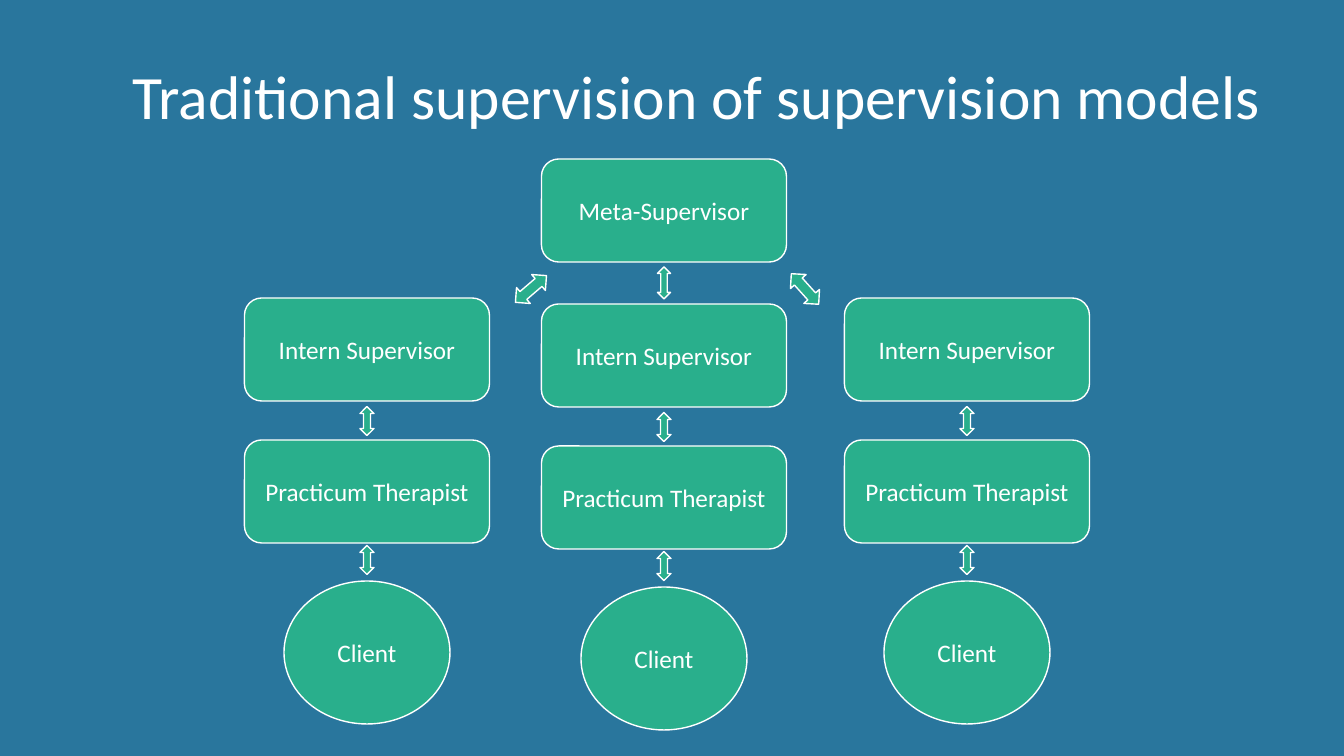
"""Build the slide on traditional supervision of supervision models."""
import pptx
import pptx.util
import pptx.dml.color
import pptx.enum.shapes
import pptx.enum.text

BLUE = pptx.dml.color.RGBColor(0x29, 0x76, 0x9D)
GREEN = pptx.dml.color.RGBColor(0x29, 0xAF, 0x8C)
WHITE = pptx.dml.color.RGBColor(0xFF, 0xFF, 0xFF)
KIND = pptx.enum.shapes.MSO_SHAPE
SCALE = 914400 / 100.8
BOX = (245, 103)
ROUND = (166, 143)
LINK = (29, 14)
FRAME = {"word_wrap": True, "vertical_anchor": pptx.enum.text.MSO_ANCHOR.MIDDLE}
FONT = {"name": "Calibri"}


def px(count):
    return pptx.util.Emu(round(count * SCALE))


def apply(target, values):
    for name, value in values.items():
        setattr(target, name, value)


def write(shape, text, size):
    frame = shape.text_frame
    frame.text = text
    apply(frame, FRAME)
    line = frame.paragraphs[0]
    line.alignment = pptx.enum.text.PP_ALIGN.CENTER
    font = line.runs[0].font
    apply(font, FONT | {"size": pptx.util.Pt(size)})
    font.color.rgb = WHITE
    return frame


def add_form(shapes, kind, mid, top, size):
    wide, high = size
    form = shapes.add_shape(kind, px(mid - wide / 2), px(top), px(wide), px(high))
    form.shadow.inherit = False
    form.fill.solid()
    form.fill.fore_color.rgb = GREEN
    form.line.color.rgb = WHITE
    form.line.width = pptx.util.Pt(1)
    return form


def add_node(shapes, kind, mid, top, size, text):
    write(add_form(shapes, kind, mid, top, size), text, 18)


def add_arrow(shapes, mid, level, size, angle):
    top = level - size[1] / 2
    add_form(shapes, KIND.LEFT_RIGHT_ARROW, mid, top, size).rotation = angle


def add_column(slide, mid, top):
    shapes = slide.shapes.add_group_shape().shapes
    add_node(shapes, KIND.ROUNDED_RECTANGLE, mid, top, BOX, "Intern Supervisor")
    add_node(shapes, KIND.ROUNDED_RECTANGLE, mid, top + 142, BOX, "Practicum Therapist")
    add_node(shapes, KIND.OVAL, mid, top + 283, ROUND, "Client")
    for drop in (123, 262):
        add_arrow(shapes, mid, top + drop, LINK, 270)


def add_title(slide, text):
    title = slide.shapes.title
    apply(title, {"left": px(50), "top": px(27), "width": px(1241), "height": px(146)})
    frame = write(title, text, 44)
    frame.margin_left = px(63)
    frame.paragraphs[0].line_spacing = 0.9


def main():
    deck = pptx.Presentation()
    apply(deck, {"slide_width": px(1344), "slide_height": px(756)})
    slide = deck.slides.add_slide(deck.slide_layouts[5])
    slide.background.fill.solid()
    slide.background.fill.fore_color.rgb = BLUE
    add_title(slide, "Traditional supervision of supervision models")
    add_node(slide.shapes, KIND.ROUNDED_RECTANGLE, 664, 159, BOX, "Meta-Supervisor")
    add_arrow(slide.shapes, 664, 283, (32, 13), 90)
    add_arrow(slide.shapes, 531, 289, (41, 21), 319.3)
    add_arrow(slide.shapes, 805, 289, (41, 21), 48.1)
    for mid, top in ((367, 298), (664, 304), (967, 298)):
        add_column(slide, mid, top)
    deck.save("out.pptx")


if __name__ == "__main__":
    main()
